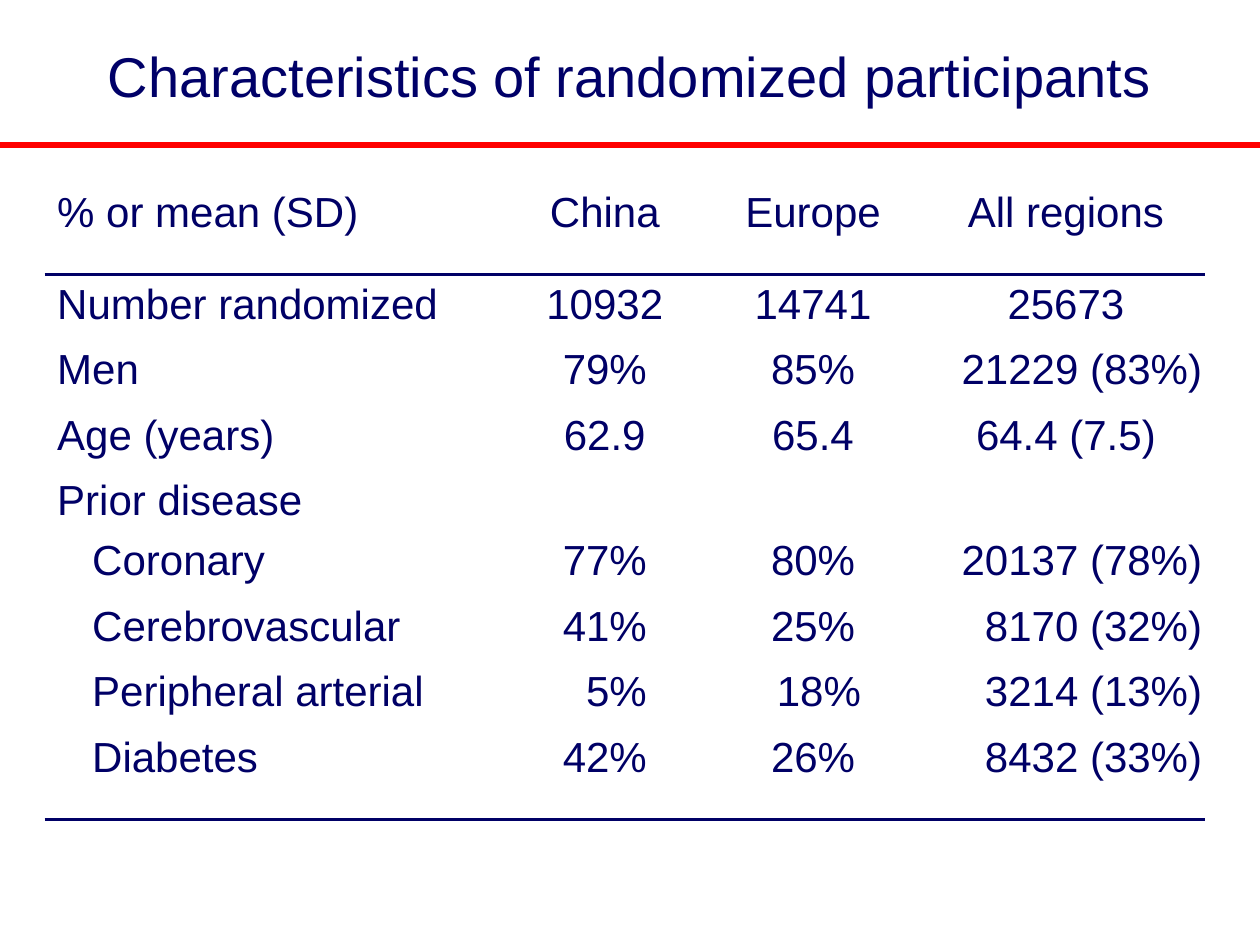
from typing import NamedTuple

from lxml import etree
from pptx import Presentation
from pptx.dml.color import RGBColor
from pptx.enum.shapes import MSO_CONNECTOR
from pptx.enum.text import MSO_ANCHOR, PP_ALIGN
from pptx.oxml.ns import qn
from pptx.util import Pt

LEFT, CENTER, RIGHT = PP_ALIGN.LEFT, PP_ALIGN.CENTER, PP_ALIGN.RIGHT
MIDDLE, TOP = MSO_ANCHOR.MIDDLE, MSO_ANCHOR.TOP
STRAIGHT = MSO_CONNECTOR.STRAIGHT

NAVY = RGBColor(0x00, 0x00, 0x66)
TITLE_NAVY = RGBColor(0x00, 0x00, 0x68)
RED = RGBColor(0xFF, 0x00, 0x00)
FONT = "Arial"

SLIDE_WIDTH, SLIDE_HEIGHT = 720, 540
TABLE_LEFT, TABLE_TOP = 25.5, 85.8
COLUMN_WIDTHS = (260.6, 119, 119, 170)
HEADER_HEIGHT, ROW_HEIGHT, GROUP_HEIGHT = 71.2, 37.5, 34.2
CELL_MARGIN = 7.2
SUBITEM_INDENT = 20


class Row(NamedTuple):
    label: str
    china: str = ""
    europe: str = ""
    all_regions: str = ""
    total_alignment: PP_ALIGN = RIGHT
    height: float = ROW_HEIGHT
    anchor: MSO_ANCHOR = TOP
    indents: tuple[float, ...] = (0, 0, 0, 0)


class Rule(NamedTuple):
    left: float
    right: float
    y: float
    color: RGBColor
    width: float


SUBITEM = (SUBITEM_INDENT, 0, 0, 0)
ROWS = (
    Row("% or mean (SD)", "China", "Europe", "All regions", CENTER, HEADER_HEIGHT, MIDDLE),
    Row("Number randomized", "10932", "14741", "25673", CENTER),
    Row("Men", "79%", "85%", "21229 (83%)"),
    Row("Age (years)", "62.9", "65.4", "64.4 (7.5)", CENTER),
    Row("Prior disease", height=GROUP_HEIGHT),
    Row("Coronary", "77%", "80%", "20137 (78%)", indents=SUBITEM),
    Row("Cerebrovascular", "41%", "25%", "8170 (32%)", indents=SUBITEM),
    Row("Peripheral arterial", "5%", "18%", "3214 (13%)",
        indents=(SUBITEM_INDENT, 13.3, 6.7, 0)),
    Row("Diabetes", "42%", "26%", "8432 (33%)", indents=SUBITEM),
)
RULES = (
    Rule(0, SLIDE_WIDTH, 82.8, RED, 3),
    Rule(TABLE_LEFT, 688.8, 156.7, NAVY, 1.5),
    Rule(TABLE_LEFT, 688.8, 468.4, NAVY, 1.5),
)


def format_paragraph(paragraph, size: float, color: RGBColor, alignment: PP_ALIGN) -> None:
    paragraph.alignment = alignment
    font = paragraph.font
    font.name, font.size, font.bold = FONT, Pt(size), False
    font.color.rgb = color


def add_title(slide, text: str) -> None:
    title = slide.shapes.title
    title.left, title.top, title.width, title.height = Pt(36), Pt(-2), Pt(648), Pt(90)
    title.text_frame.text = text
    title.text_frame.vertical_anchor = MIDDLE
    format_paragraph(title.text_frame.paragraphs[0], 32, TITLE_NAVY, CENTER)


def fill_row(table, index: int, row: Row) -> None:
    table.rows[index].height = Pt(row.height)
    texts = (row.label, row.china, row.europe, row.all_regions)
    alignments = (LEFT, CENTER, CENTER, row.total_alignment)
    for column, (text, alignment, indent) in enumerate(zip(texts, alignments, row.indents)):
        cell = table.cell(index, column)
        cell.fill.background()
        cell.vertical_anchor = row.anchor
        cell.margin_left = Pt(CELL_MARGIN + indent)
        cell.margin_right = Pt(CELL_MARGIN)
        cell.margin_top, cell.margin_bottom = Pt(3.6), Pt(2.8)
        cell.text = text
        format_paragraph(cell.text_frame.paragraphs[0], 24, NAVY, alignment)


def add_characteristics_table(slide) -> None:
    table = slide.shapes.add_table(
        len(ROWS), len(COLUMN_WIDTHS), Pt(TABLE_LEFT), Pt(TABLE_TOP),
        Pt(sum(COLUMN_WIDTHS)), Pt(sum(row.height for row in ROWS)),
    ).table
    table.first_row = table.horz_banding = False
    for column, width in zip(table.columns, COLUMN_WIDTHS):
        column.width = Pt(width)
    for index, row in enumerate(ROWS):
        fill_row(table, index, row)


def add_rule(slide, rule: Rule) -> None:
    connector = slide.shapes.add_connector(
        STRAIGHT, Pt(rule.left), Pt(rule.y), Pt(rule.right), Pt(rule.y))
    connector.line.color.rgb = rule.color
    connector.line.width = Pt(rule.width)
    etree.SubElement(connector._element.spPr, qn("a:effectLst"))


def main() -> None:
    presentation = Presentation()
    presentation.slide_width, presentation.slide_height = Pt(SLIDE_WIDTH), Pt(SLIDE_HEIGHT)
    slide = presentation.slides.add_slide(presentation.slide_layouts.get_by_name("Title Only"))
    add_title(slide, "Characteristics of randomized participants")
    add_characteristics_table(slide)
    for rule in RULES:
        add_rule(slide, rule)
    presentation.save("out.pptx")


if __name__ == "__main__":
    main()
